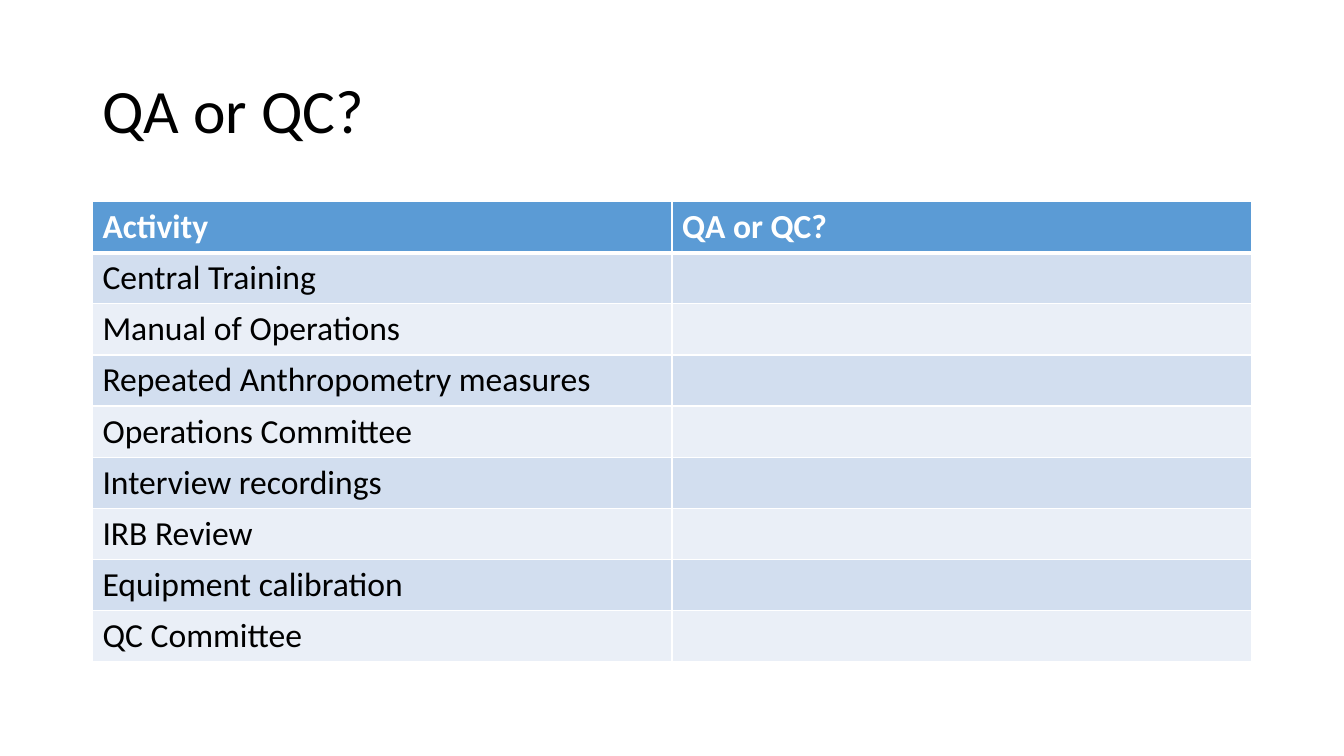
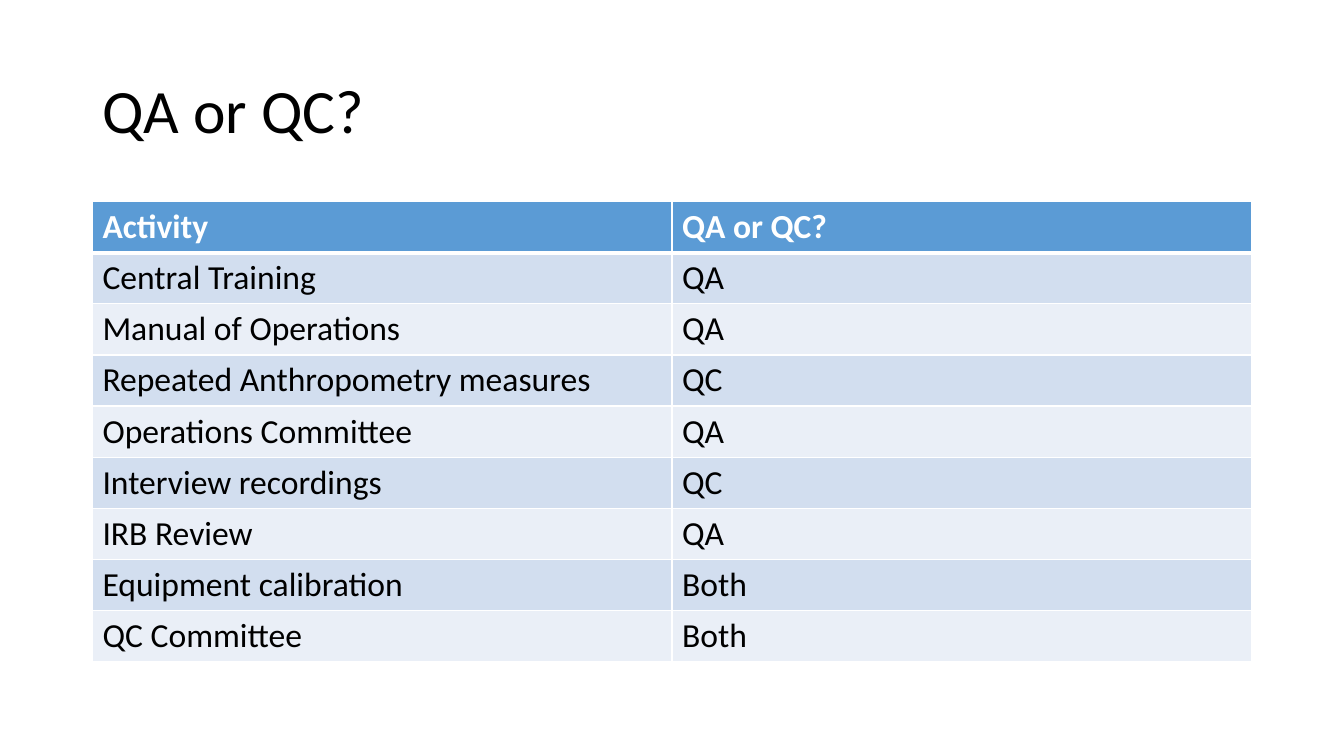
from dataclasses import dataclass

from lxml import etree
from pptx import Presentation
from pptx.dml.color import RGBColor
from pptx.enum.text import MSO_ANCHOR, MSO_AUTO_SIZE, PP_ALIGN
from pptx.oxml.ns import qn
from pptx.util import Cm, Pt

MIDDLE = MSO_ANCHOR.MIDDLE
NO_AUTOFIT = MSO_AUTO_SIZE.NONE
LEFT = PP_ALIGN.LEFT
TITLE_ONLY = 5


@dataclass(frozen=True)
class Theme:
    font: str = "Calibri"
    title_size: int = 44
    table_size: int = 24
    text: str = "000000"
    header_text: str = "FFFFFF"
    header_fill: str = "5B9BD5"
    band_fills: tuple = ("D2DEEF", "EAEFF7")
    border: str = "FFFFFF"
    thin: int = 1
    thick: int = 3


THEME = Theme()
MARGIN = Cm(2.33)
CONTENT_WIDTH = Cm(29.21)
TITLE_TOP, TITLE_HEIGHT = Cm(1.01), Cm(3.68)
TABLE_TOP, ROW_HEIGHT = Cm(5.08), Cm(1.27)

TITLE = "QA or QC?"
HEADER = ("Activity", "QA or QC?")
ANSWERS = {
    "Central Training": "QA",
    "Manual of Operations": "QA",
    "Repeated Anthropometry measures": "QC",
    "Operations Committee": "QA",
    "Interview recordings": "QC",
    "IRB Review": "QA",
    "Equipment calibration": "Both",
    "QC Committee": "Both",
}


def apply_format(target, values):
    for name, value in values.items():
        setattr(target, name, value)


def format_font(font, size, color, bold=False):
    apply_format(font, {"name": THEME.font, "size": Pt(size), "bold": bold})
    font.color.rgb = RGBColor.from_string(color)


def add_title(page, text):
    title = page.shapes.title
    apply_format(title, {"left": MARGIN, "top": TITLE_TOP,
                         "width": CONTENT_WIDTH, "height": TITLE_HEIGHT})
    frame = title.text_frame
    frame.text = text
    apply_format(frame, {"vertical_anchor": MIDDLE, "word_wrap": True,
                         "auto_size": NO_AUTOFIT})
    para = frame.paragraphs[0]
    apply_format(para, {"alignment": LEFT, "line_spacing": 0.9})
    format_font(para.runs[0].font, THEME.title_size, THEME.text)


def set_borders(cell, top, bottom):
    properties = cell._tc.get_or_add_tcPr()
    widths = {"lnL": THEME.thin, "lnR": THEME.thin, "lnT": top, "lnB": bottom}
    for edge, width in widths.items():
        line = etree.SubElement(properties, qn(f"a:{edge}"), w=str(Pt(width)))
        fill = etree.SubElement(line, qn("a:solidFill"))
        etree.SubElement(fill, qn("a:srgbClr"), val=THEME.border)


def fill_cell(cell, text, row):
    is_header = row == 0
    set_borders(cell,
                top=THEME.thick if row == 1 else THEME.thin,
                bottom=THEME.thick if is_header else THEME.thin)
    color = THEME.header_fill if is_header else THEME.band_fills[(row - 1) % 2]
    cell.fill.solid()
    cell.fill.fore_color.rgb = RGBColor.from_string(color)
    if text:
        cell.text = text
        format_font(cell.text_frame.paragraphs[0].runs[0].font, THEME.table_size,
                    THEME.header_text if is_header else THEME.text, is_header)


def add_activity_table(page, rows):
    table = page.shapes.add_table(len(rows), len(HEADER), MARGIN, TABLE_TOP,
                                  CONTENT_WIDTH, ROW_HEIGHT * len(rows)).table
    for row, texts in enumerate(rows):
        for column, text in enumerate(texts):
            fill_cell(table.cell(row, column), text, row)


def add_quiz_page(deck, show_answers):
    page = deck.slides.add_slide(deck.slide_layouts[TITLE_ONLY])
    add_title(page, TITLE)
    body = [(activity, answer if show_answers else "")
            for activity, answer in ANSWERS.items()]
    add_activity_table(page, [HEADER, *body])


def main():
    deck = Presentation()
    apply_format(deck, {"slide_width": Cm(33.87), "slide_height": Cm(19.05)})
    for show_answers in (False, True):
        add_quiz_page(deck, show_answers)
    deck.save("out.pptx")


if __name__ == "__main__":
    main()
